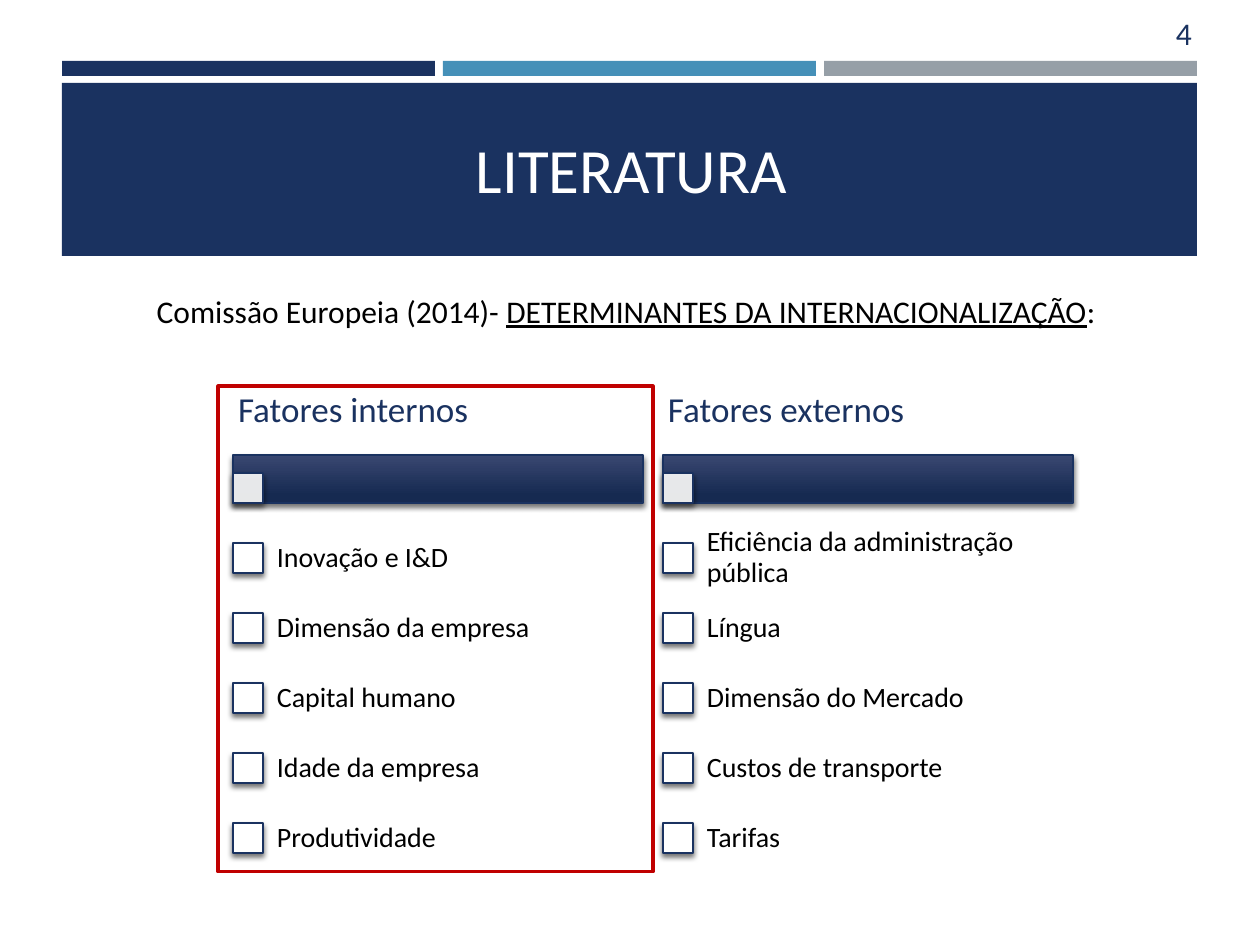
"""Build the slide on internal and external factors of internationalisation."""
from lxml.etree import SubElement
from pptx import Presentation
from pptx.dml.color import RGBColor
from pptx.enum.shapes import MSO_SHAPE
from pptx.enum.text import MSO_ANCHOR, PP_ALIGN
from pptx.oxml.ns import qn
from pptx.util import Pt

HUES = {
    "navy": "1A3260", "blue": "4590B8", "gray": "969FA7", "white": "FFFFFF",
    "black": "000000", "red": "C00000", "top": "394771", "base": "162A51",
}
TITLE = "LITERATURA"
PAGE = "4"
LEAD = [
    ("Comissão Europeia (2014)- ", False),
    ("DETERMINANTES DA INTERNACIONALIZAÇÃO", True),
    (":", False),
]
LISTS = [
    ("Fatores internos", [
        "Inovação e I&D", "Dimensão da empresa", "Capital humano",
        "Idade da empresa", "Produtividade",
    ]),
    ("Fatores externos", [
        "Eficiência da administração pública", "Língua",
        "Dimensão do Mercado", "Custos de transporte", "Tarifas",
    ]),
]
UNIT = 914400 / 126
LEFT, GAP, WIDE = 233, 430, 410
BOX, ROW = 30, 70


def px(*nums):
    return [round(n * UNIT) for n in nums]


def hue(name):
    return RGBColor.from_string(HUES[name])


def add_text(runs, area, size=16, color="black", align=PP_ALIGN.LEFT,
             anchor=MSO_ANCHOR.MIDDLE, pad=(13, 6), space=1.0):
    frame = slide.shapes.add_textbox(*px(*area)).text_frame
    frame.word_wrap = True
    frame.vertical_anchor = anchor
    side, edge = px(*pad)
    frame.margin_left = frame.margin_right = side
    frame.margin_top = frame.margin_bottom = edge
    para = frame.paragraphs[0]
    para.alignment = align
    para.line_spacing = space
    for words, under in [(runs, False)] if isinstance(runs, str) else runs:
        run = para.add_run()
        run.text = words
        font = run.font
        font.name, font.size, font.underline = "Calibri", Pt(size), under
        font.color.rgb = hue(color)


def add_rect(area, fill=None, line=None, width=1):
    shape = slide.shapes.add_shape(MSO_SHAPE.RECTANGLE, *px(*area))
    shape.shadow.inherit = False
    if fill:
        shape.fill.solid()
        shape.fill.fore_color.rgb = hue(fill)
    else:
        shape.fill.background()
    if line:
        shape.line.color.rgb = hue(line)
        shape.line.width = Pt(width)
    else:
        shape.line.fill.background()
    return shape


def add_shade(shape):
    glow = shape.element.spPr.find(qn("a:effectLst"))
    cast = SubElement(glow, qn("a:outerShdw"), blurRad=str(Pt(3)),
                      dist=str(Pt(2)), dir="5400000", rotWithShape="0")
    tint = SubElement(cast, qn("a:srgbClr"), val=HUES["black"])
    SubElement(tint, qn("a:alpha"), val="55000")


def add_box(left, top):
    box = add_rect((left, top, BOX, BOX), "white", "navy")
    add_shade(box)
    return box


def add_bar(left, top, high):
    bar = add_rect((left, top, WIDE, high), line="navy")
    bar.fill.gradient()
    bar.fill.gradient_angle = 270
    marks = [("top", 0), ("base", 0.84)]
    for stop, (name, place) in zip(bar.fill.gradient_stops, marks):
        stop.color.rgb = hue(name)
        stop.position = place
    add_shade(bar)
    box = add_box(left, top + high - BOX)
    tint = box.element.spPr.find(qn("a:solidFill"))[0]
    SubElement(tint, qn("a:alpha"), val="90000")


def add_list(left, head, items):
    add_bar(left, 455, 48)
    add_text(head, (left, 368, WIDE, 87), size=20, color="navy",
             pad=(5, 4), space=0.9)
    for i, item in enumerate(items):
        top = 523 + i * ROW
        add_box(left, top + 20)
        add_text(item, (left + 29, top, WIDE - 29, ROW), pad=(15, 15),
                 space=0.9)


deck = Presentation()
deck.slide_width, deck.slide_height = px(1260, 945)
slide = deck.slides.add_slide(deck.slide_layouts[6])

for i, name in enumerate(["navy", "blue", "gray"]):
    add_rect((62 + i * 381, 61, 373, 15), name)
add_rect((62, 83, 1135, 173), "navy")
add_text(TITLE, (81, 94, 1101, 149), size=36, color="white",
         align=PP_ALIGN.CENTER)
add_text(PAGE, (1163, 8, 66, 50), size=18, color="navy",
         anchor=MSO_ANCHOR.TOP)
for i, (head, items) in enumerate(LISTS):
    add_list(LEFT + i * GAP, head, items)
add_text(LEAD, (44, 286, 1164, 50), size=18, align=PP_ALIGN.CENTER,
         anchor=MSO_ANCHOR.TOP)
add_rect((218, 386, 435, 486), line="red", width=1.75)

deck.save("out.pptx")
